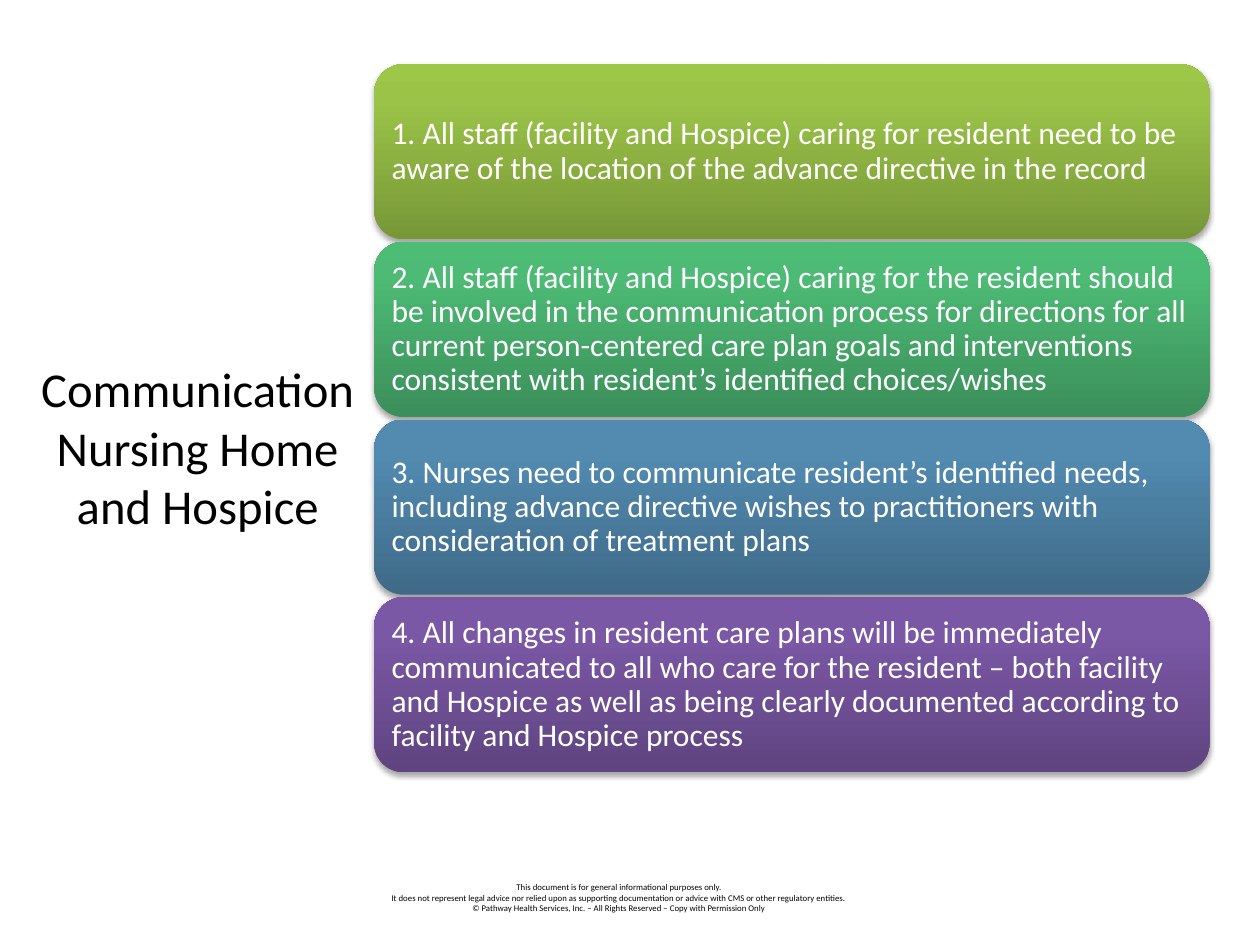
from pptx import Presentation
from pptx.dml.color import RGBColor
from pptx.enum.shapes import MSO_SHAPE
from pptx.enum.text import MSO_ANCHOR, MSO_AUTO_SIZE, PP_ALIGN
from pptx.oxml import parse_xml
from pptx.oxml.ns import nsdecls
from pptx.util import Inches, Pt

TITLE = "Communication Nursing Home and Hospice"
PRACTICES = [
    ("1. All staff (facility and Hospice) caring for resident need to be aware of the location "
     "of the advance directive in the record", ("779737", "9BC348", "9DC746")),
    ("2. All staff (facility and Hospice) caring for the resident should be involved in the "
     "communication process for directions for all current person-centered care plan goals and "
     "interventions consistent with resident’s identified choices/wishes",
     ("3B8F5A", "4DBA75", "4BBD75")),
    ("3. Nurses need to communicate resident’s identified needs, including advance directive "
     "wishes to practitioners with consideration of treatment plans",
     ("3F6A88", "528AB0", "518BB3")),
    ("4. All changes in resident care plans will be immediately communicated to all who care for "
     "the resident – both facility and Hospice as well as being clearly documented according to "
     "facility and Hospice process", ("5F4480", "7B58A6", "7C57A8")),
]
DISCLAIMER = [
    "This document is for general informational purposes only.",
    "It does not represent legal advice nor relied upon as supporting documentation or advice "
    "with CMS or other regulatory entities.",
    "© Pathway Health Services, Inc. – All Rights Reserved – Copy with Permission Only",
]

SLIDE_W, SLIDE_H = 10, 7.5
TITLE_AREA = (0.17, 1.58, 2.8, 3.93)
FOOTER_AREA = (2.75, 6.95, 4.33, 0.35)
CARD_LEFT, CARD_TOP, CARD_W, CARD_H = 2.97, 0.51, 6.63, 1.39
CARD_GAP = 0.02
CARD_PITCH = CARD_H + CARD_GAP
CARD_INSET = 0.07
STOP_SHARES = (0, 80, 100)

FRAME_FORMAT = {"word_wrap": True, "auto_size": MSO_AUTO_SIZE.NONE}
CARD_FRAME = FRAME_FORMAT | {"vertical_anchor": MSO_ANCHOR.MIDDLE} | {
    f"margin_{side}": Inches(CARD_INSET) for side in ("left", "top", "right", "bottom")}


def inches(area):
    return [Inches(length) for length in area]


def apply(target, values):
    for attribute, value in values.items():
        setattr(target, attribute, value)


def write(paragraph, text, size, color, **layout):
    paragraph.text = text
    apply(paragraph, layout)
    apply(paragraph.font, {"name": "Calibri", "size": Pt(size)})
    paragraph.font.color.rgb = RGBColor.from_string(color)


def shade(card, colors):
    stops = "".join(
        f'<a:gs pos="{share * 1000}"><a:srgbClr val="{color}"/></a:gs>'
        for share, color in zip(STOP_SHARES, colors))
    properties = card._element.spPr
    properties.append(parse_xml(
        f'<a:gradFill {nsdecls("a")} rotWithShape="1"><a:gsLst>{stops}</a:gsLst>'
        '<a:lin ang="16200000" scaled="0"/></a:gradFill>'))
    card.line.fill.background()
    properties.append(parse_xml(
        f'<a:effectLst {nsdecls("a")}><a:outerShdw blurRad="{Pt(3.1)}" dist="{Pt(1.8)}" '
        'dir="5400000" rotWithShape="0"><a:srgbClr val="000000"><a:alpha val="35000"/>'
        '</a:srgbClr></a:outerShdw></a:effectLst>'))


def add_title(slide):
    title = slide.shapes.title
    apply(title, dict(zip(("left", "top", "width", "height"), inches(TITLE_AREA))))
    apply(title.text_frame, FRAME_FORMAT | {"vertical_anchor": MSO_ANCHOR.MIDDLE})
    write(title.text_frame.paragraphs[0], TITLE, 27.8, "000000", alignment=PP_ALIGN.CENTER)


def add_practices(slide):
    for row, (text, colors) in enumerate(PRACTICES):
        area = (CARD_LEFT, CARD_TOP + row * CARD_PITCH, CARD_W, CARD_H)
        card = slide.shapes.add_shape(MSO_SHAPE.ROUNDED_RECTANGLE, *inches(area))
        shade(card, colors)
        apply(card.text_frame, CARD_FRAME)
        write(card.text_frame.paragraphs[0], text, 18, "FFFFFF",
              alignment=PP_ALIGN.LEFT, line_spacing=0.9)


def add_disclaimer(slide):
    frame = slide.shapes.add_textbox(*inches(FOOTER_AREA)).text_frame
    apply(frame, FRAME_FORMAT)
    for row, line in enumerate(DISCLAIMER):
        paragraph = frame.add_paragraph() if row else frame.paragraphs[0]
        write(paragraph, line, 5, "000000", alignment=PP_ALIGN.CENTER)


def main():
    deck = Presentation()
    apply(deck, {"slide_width": Inches(SLIDE_W), "slide_height": Inches(SLIDE_H)})
    slide = deck.slides.add_slide(deck.slide_layouts[5])
    add_disclaimer(slide)
    add_title(slide)
    add_practices(slide)
    deck.save("out.pptx")


if __name__ == "__main__":
    main()
